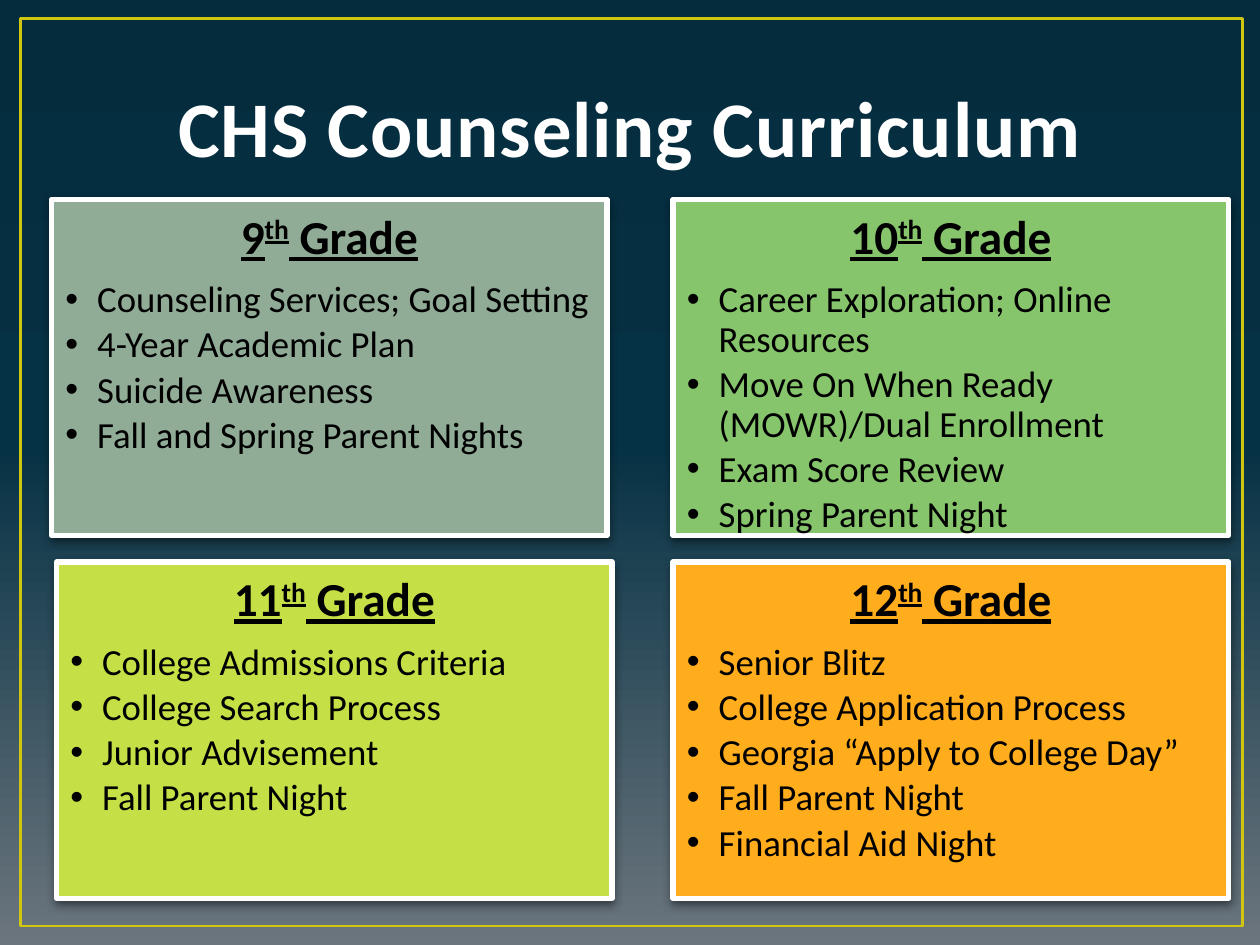
"""Build the counseling curriculum slide with one card per grade."""
from copy import deepcopy
from dataclasses import dataclass

from lxml.etree import SubElement
from pptx import Presentation
from pptx.dml.color import RGBColor
from pptx.enum.shapes import MSO_SHAPE as Shape
from pptx.enum.text import MSO_ANCHOR as Anchor, PP_ALIGN as Align
from pptx.oxml import parse_xml
from pptx.oxml.ns import nsdecls, qn
from pptx.util import Cm, Pt

FONT = "Calibri"
WHITE = RGBColor(0xFF, 0xFF, 0xFF)
BLACK = RGBColor(0x00, 0x00, 0x00)
FRAME_YELLOW = RGBColor(0xCF, 0xC6, 0x0D)
SAGE = RGBColor(0x90, 0xAC, 0x97)
GREEN = RGBColor(0x86, 0xC5, 0x6C)
LIME = RGBColor(0xC5, 0xE0, 0x46)
ORANGE = RGBColor(0xFF, 0xAD, 0x1C)
BACKGROUND_STOPS = (
    (0, RGBColor(0x6B, 0x75, 0x7D)),
    (0.53, RGBColor(0x06, 0x32, 0x45)),
    (1, RGBColor(0x05, 0x2C, 0x3D)),
)

TOP_ROW, BOTTOM_ROW = Cm(4.02), Cm(11.33)
RIGHT_COLUMN = Cm(13.57)
CARD_WIDTH, CARD_HEIGHT = Cm(11.2), Cm(6.78)
CARD_INSET, BULLET_INDENT = Cm(0.28), Cm(0.64)
HEADING_SIZE, ITEM_SIZE = 27, 21


@dataclass(frozen=True)
class GradeCard:
    grade: str
    left: int
    top: int
    fill: RGBColor
    items: tuple[str, ...]


CARDS = (
    GradeCard("9", Cm(1.04), TOP_ROW, SAGE, (
        "Counseling Services; Goal Setting", "4-Year Academic Plan",
        "Suicide Awareness", "Fall and Spring Parent Nights")),
    GradeCard("10", RIGHT_COLUMN, TOP_ROW, GREEN, (
        "Career Exploration; Online Resources",
        "Move On When Ready (MOWR)/Dual Enrollment",
        "Exam Score Review", "Spring Parent Night")),
    GradeCard("11", Cm(1.14), BOTTOM_ROW, LIME, (
        "College Admissions Criteria", "College Search Process",
        "Junior Advisement", "Fall Parent Night")),
    GradeCard("12", RIGHT_COLUMN, BOTTOM_ROW, ORANGE, (
        "Senior Blitz", "College Application Process",
        "Georgia “Apply to College Day”", "Fall Parent Night",
        "Financial Aid Night")),
)


def add_span(para, text: str, *, size: float, color: RGBColor = BLACK,
             bold: bool = False, underline: bool = False,
             baseline: int = 0, spacing: int = 0) -> None:
    span = para.add_run()
    span.text = text
    font = span.font
    font.name, font.size, font.bold, font.underline = FONT, Pt(size), bold, underline
    font.color.rgb = color
    properties = span._r.get_or_add_rPr()
    if baseline:
        properties.set("baseline", str(baseline * 1000))
    if spacing:
        properties.set("spc", str(spacing))


def paint_background(page) -> None:
    fill = page.background.fill
    fill.gradient()
    fill.gradient_angle = 90
    stop_list = page.element.find(".//" + qn("a:gsLst"))
    stop_list.insert(1, deepcopy(stop_list[0]))
    for stop, (position, color) in zip(fill.gradient_stops, BACKGROUND_STOPS):
        stop.position = position
        stop.color.rgb = color


def add_frame(page) -> None:
    frame = page.shapes.add_shape(
        Shape.RECTANGLE, Cm(0.41), Cm(0.38), Cm(24.64), Cm(18.29))
    frame.shadow.inherit = False
    frame.fill.background()
    frame.line.color.rgb = FRAME_YELLOW
    frame.line.width = Pt(1.5)


def add_title(page, text: str) -> None:
    box = page.shapes.add_textbox(Cm(0.64), Cm(0.64), Cm(24.13), Cm(2.97))
    body = box.text_frame
    body.word_wrap = True
    body.vertical_anchor = Anchor.BOTTOM
    para = body.paragraphs[0]
    para.alignment = Align.CENTER
    add_span(para, text, size=45, color=WHITE, bold=True, spacing=50)


def add_shadow(box) -> None:
    box._element.spPr.append(parse_xml(
        f'<a:effectLst {nsdecls("a")}>'
        f'<a:outerShdw blurRad="{Pt(5)}" dist="{Pt(2)}" dir="5400000" rotWithShape="0">'
        '<a:srgbClr val="000000"><a:alpha val="43000"/></a:srgbClr>'
        '</a:outerShdw></a:effectLst>'))


def add_bullet(para) -> None:
    properties = para._p.get_or_add_pPr()
    properties.set("marL", str(BULLET_INDENT))
    properties.set("indent", str(-BULLET_INDENT))
    SubElement(properties, qn("a:buFont")).set("typeface", "Arial")
    SubElement(properties, qn("a:buChar")).set("char", "•")


def add_card(page, card: GradeCard) -> None:
    box = page.shapes.add_shape(
        Shape.RECTANGLE, card.left, card.top, CARD_WIDTH, CARD_HEIGHT)
    box.fill.solid()
    box.fill.fore_color.rgb = card.fill
    box.line.color.rgb = WHITE
    box.line.width = Pt(3)
    add_shadow(box)

    body = box.text_frame
    body.word_wrap = True
    body.vertical_anchor = Anchor.TOP
    body.margin_left = body.margin_right = CARD_INSET
    body.margin_top = body.margin_bottom = CARD_INSET

    heading = body.paragraphs[0]
    heading.alignment = Align.CENTER
    heading.line_spacing = 0.9
    heading.space_after = Pt(HEADING_SIZE * 0.35)
    for text, baseline in ((card.grade, 0), ("th", 30), (" Grade", 0)):
        add_span(heading, text, size=HEADING_SIZE, bold=True,
                 underline=True, baseline=baseline)

    for item in card.items:
        para = body.add_paragraph()
        para.alignment = Align.LEFT
        para.line_spacing = 0.9
        para.space_after = Pt(ITEM_SIZE * 0.15)
        add_bullet(para)
        add_span(para, item, size=ITEM_SIZE)


def main() -> None:
    deck = Presentation()
    deck.slide_width, deck.slide_height = Cm(25.4), Cm(19.05)
    page = deck.slides.add_slide(deck.slide_layouts[6])
    paint_background(page)
    add_frame(page)
    add_title(page, "CHS Counseling Curriculum")
    for card in CARDS:
        add_card(page, card)
    deck.save("out.pptx")


if __name__ == "__main__":
    main()
